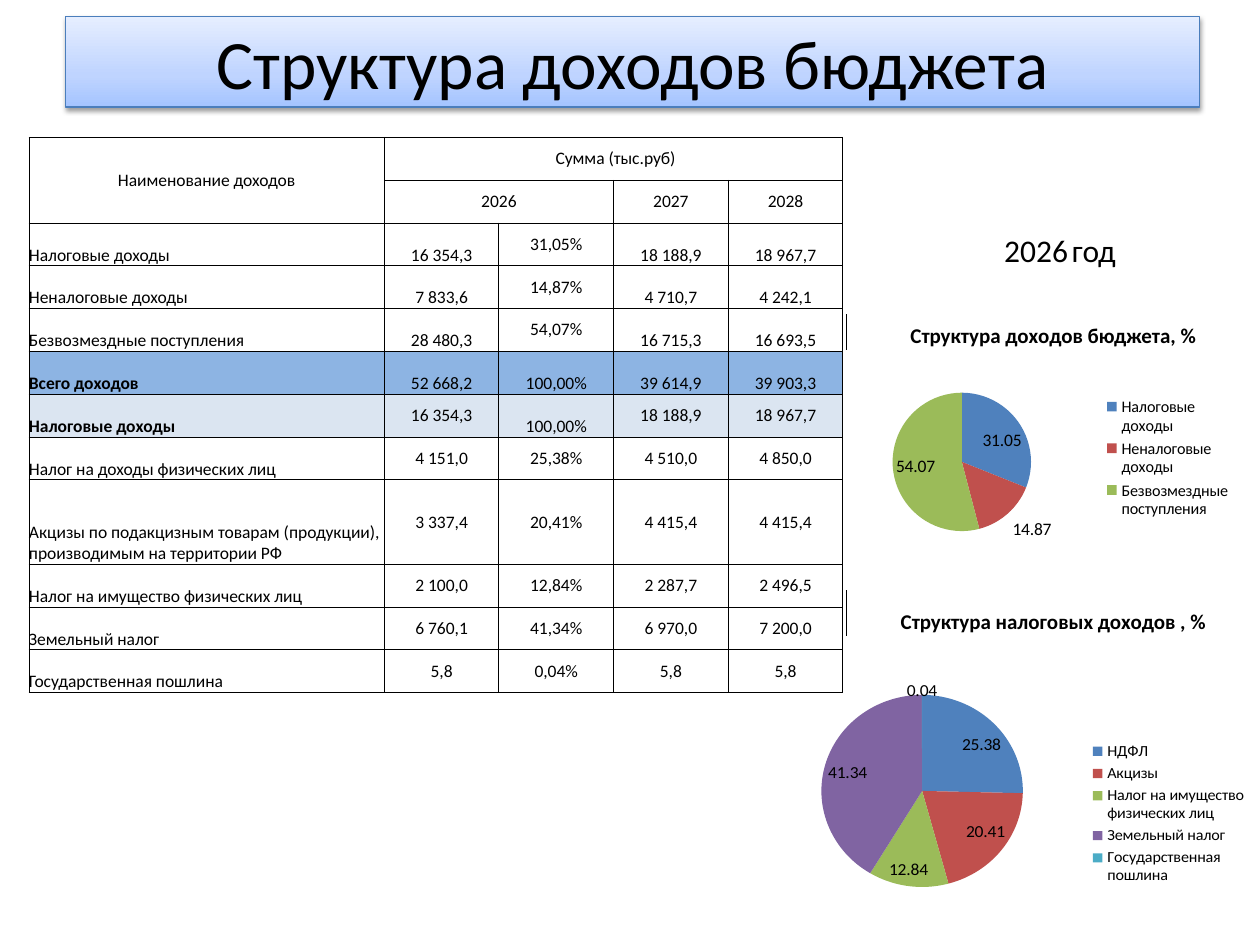
from lxml import etree
from pptx import Presentation
from pptx import util as u
from pptx.chart.data import CategoryChartData
from pptx.dml.color import RGBColor
from pptx.enum import chart as ch
from pptx.enum import text
from pptx.oxml import parse_xml
from pptx.oxml.ns import nsdecls

FONT = "Calibri"
BLACK = RGBColor(0x00, 0x00, 0x00)
TITLE_LINE = RGBColor(0x4B, 0x7E, 0xBC)
TOTAL_FILL = RGBColor(0x8D, 0xB4, 0xE3)
SUBTOTAL_FILL = RGBColor(0xDB, 0xE5, 0xF1)
SLICES = [RGBColor.from_string(code) for code in
          ("4F81BD", "C0504D", "9BBB59", "8064A2", "4BACC6")]

TITLE = "Структура доходов бюджета"
YEAR = [("2026", 18), (" ", 10), ("год", 18)]
# Name, 2026 sum, 2026 share, 2027, 2028, vertical anchors (b bottom, m middle)
HEAD = [
    ("Наименование доходов", " Сумма (тыс.руб)", "", "", "", "mmmmm"),
    ("", "2026", "", "2027", "2028", "mmmmm"),
]
ROWS = [
    ("Налоговые доходы", "16 354,3", "31,05%", "18 188,9", "18 967,7", "bbmbb"),
    ("Неналоговые доходы", "7 833,6", "14,87%", "4 710,7", "4 242,1", "bbmbb"),
    ("Безвозмездные поступления", "28 480,3", "54,07%", "16 715,3", "16 693,5", "bbmbb"),
    ("Всего доходов", "52 668,2", "100,00%", "39 614,9", "39 903,3", "bbbbb"),
    ("Налоговые доходы", "16 354,3", "100,00%", "18 188,9", "18 967,7", "bmbmm"),
    ("Налог на доходы физических лиц", "4 151,0", "25,38%", "4 510,0", "4 850,0", "bmmmm"),
    ("Акцизы по подакцизным товарам (продукции), производимым на территории РФ",
     "3 337,4", "20,41%", "4 415,4", "4 415,4", "bmmmm"),
    ("Налог на имущество физических лиц", "2 100,0", "12,84%", "2 287,7", "2 496,5", "bmmmm"),
    ("Земельный налог", "6 760,1", "41,34%", "6 970,0", "7 200,0", "bmmmm"),
    ("Государственная пошлина", "5,8", "0,04%", "5,8", "5,8", "bmmmm"),
]
MERGES = [((0, 0), (1, 0)), ((0, 1), (0, 4)), ((1, 1), (1, 2))]
ROW_FILLS = {5: TOTAL_FILL, 6: SUBTOTAL_FILL}
TALL_ROW = 8
CAPTIONS = [
    ("Структура доходов бюджета, %", (6.72, 2.5, 3.28, 0.27)),
    ("Структура налоговых доходов , %", (6.72, 4.69, 3.28, 0.35)),
]
PIES = [
    {"at": (6.72, 2.97, 3.15, 1.34), "plot": (0.01, 0.11, 0.56, 0.82),
     "slices": [("Налоговые доходы", 31.05), ("Неналоговые доходы", 14.87),
                ("Безвозмездные поступления", 54.07)]},
    {"at": (6.25, 5.31, 3.75, 2.19), "plot": (0.05, 0.05, 0.47, 0.73),
     "slices": [("НДФЛ", 25.38), ("Акцизы ", 20.41),
                ("Налог на имущество физических лиц", 12.84),
                ("Земельный налог", 41.34), ("Государственная пошлина ", 0.04)]},
]
ANCHORS = {"b": text.MSO_ANCHOR.BOTTOM, "m": text.MSO_ANCHOR.MIDDLE}
CENTER, LEFT = text.PP_ALIGN.CENTER, text.PP_ALIGN.LEFT


def inches(lengths):
    return [u.Inches(length) for length in lengths]


def style(font, size, bold=False):
    for name, value in {"name": FONT, "size": u.Pt(size), "bold": bold}.items():
        setattr(font, name, value)
    font.color.rgb = BLACK


def write(para, spans, align, bold=False):
    para.alignment = align
    for words, size in spans:
        span = para.add_run()
        span.text = words
        style(span.font, size, bold)


def fill_cell(cell, spans, align=CENTER, anchor="b", bold=False, color=None, borders=""):
    for side in ("left", "right", "top", "bottom"):
        setattr(cell, "margin_" + side, 0)
    cell.vertical_anchor = ANCHORS[anchor]
    if color is None:
        cell.fill.background()
    else:
        cell.fill.solid()
        cell.fill.fore_color.rgb = color
    props = cell._tc.get_or_add_tcPr()
    for order, side in enumerate(borders):
        props.insert(order, parse_xml(
            f'<a:ln{side} {nsdecls("a")} w="6350"><a:solidFill><a:srgbClr val="{BLACK}"/>'
            f'</a:solidFill></a:ln{side}>'))
    write(cell.text_frame.paragraphs[0], spans, align, bold)


def add_table(page, at, widths, heights):
    table = page.shapes.add_table(len(heights), len(widths), *inches(at)).table
    table.first_row = table.horz_banding = False
    for column, width in zip(table.columns, widths):
        column.width = u.Inches(width)
    for row, height in zip(table.rows, heights):
        row.height = u.Inches(height)
    return table


def add_pie(page, at, plot, slices):
    data = CategoryChartData(number_format="0.00")
    data.categories = [name for name, _ in slices]
    data.add_series("Series 1", [value for _, value in slices])
    chart = page.shapes.add_chart(ch.XL_CHART_TYPE.PIE, *inches(at), data).chart
    style(chart.font, 10)
    chart.has_title = False
    chart.has_legend = True
    chart.legend.position = ch.XL_LEGEND_POSITION.RIGHT
    chart.legend.include_in_layout = False
    style(chart.legend.font, 9.2)

    pie = chart.plots[0]
    pie.vary_by_categories = True
    for index in range(len(slices)):
        fill = pie.series[0].points[index].format.fill
        fill.solid()
        fill.fore_color.rgb = SLICES[index]
    labels = pie.series[0].data_labels
    style(labels.font, 10)
    for name, value in {"show_value": True, "show_percentage": False,
                        "number_format": "0.00", "number_format_is_linked": False,
                        "position": ch.XL_LABEL_POSITION.BEST_FIT}.items():
        setattr(labels, name, value)

    # Fixed place of the pie inside its chart
    area = chart._chartSpace.chart.plotArea
    for old in area.findall("{*}layout"):
        area.remove(old)
    layout = parse_xml(f'<c:layout {nsdecls("c")}><c:manualLayout/></c:layout>')
    settings = [("layoutTarget", "inner"), ("xMode", "edge"), ("yMode", "edge"),
                *zip("xywh", plot)]
    for tag, value in settings:
        child = etree.SubElement(layout[0], layout.tag.replace("layout", tag))
        child.set("val", str(value))
    area.insert(0, layout)


def add_title(page):
    title = page.shapes.title
    title.left, title.top, title.width, title.height = inches((0.52, 0.13, 9, 0.72))
    title.text_frame.vertical_anchor = text.MSO_ANCHOR.MIDDLE
    write(title.text_frame.paragraphs[0], [(TITLE, 39.6)], CENTER)
    title.line.color.rgb = TITLE_LINE
    title.line.width = u.Pt(0.75)
    stops = "".join(f'<a:gs pos="{share * 1000}"><a:srgbClr val="{code}"/></a:gs>'
                    for share, code in ((0, "A4C4FF"), (35, "BFD4FF"), (100, "E6EEFF")))
    line = title.line._get_or_add_ln()
    line.addprevious(parse_xml(
        f'<a:gradFill {nsdecls("a")} rotWithShape="1"><a:gsLst>{stops}</a:gsLst>'
        '<a:lin ang="16200000" scaled="0"/></a:gradFill>'))
    line.addnext(parse_xml(
        f'<a:effectLst {nsdecls("a")}><a:outerShdw blurRad="{u.Pt(3.1)}" dist="{u.Pt(1.6)}" '
        f'dir="5400000" rotWithShape="0"><a:srgbClr val="{BLACK}"><a:alpha val="38000"/>'
        '</a:srgbClr></a:outerShdw></a:effectLst>'))


def main():
    deck = Presentation()
    deck.slide_width, deck.slide_height = inches((10, 7.5))
    page = deck.slides.add_slide(deck.slide_layouts[5])
    add_title(page)

    # Year and chart captions
    year = add_table(page, (7.97, 1.8, 0.94, 0.35), [0.94], [0.35])
    fill_cell(year.cell(0, 0), YEAR, LEFT)
    for caption, at in CAPTIONS:
        table = add_table(page, at, at[2:3], at[3:])
        fill_cell(table.cell(0, 0), [(caption, 12)], bold=True, borders="L")

    for pie in PIES:
        add_pie(page, **pie)

    # Income table
    rows = HEAD + ROWS
    heights = [0.67 if index == TALL_ROW else 0.34 for index in range(len(rows))]
    widths = [2.82] + [0.91] * 4
    table = add_table(page, (0.23, 1.09, sum(widths), sum(heights)), widths, heights)
    for r, (*words, anchors) in enumerate(rows):
        for c, word in enumerate(words):
            named = c == 0 and r >= len(HEAD)
            fill_cell(table.cell(r, c), [(word, 10)] if word else [],
                      LEFT if named else CENTER, anchors[c],
                      named and r in ROW_FILLS, ROW_FILLS.get(r), "LRTB")
    for first, last in MERGES:
        table.cell(*first).merge(table.cell(*last))

    deck.save("out.pptx")


if __name__ == "__main__":
    main()
